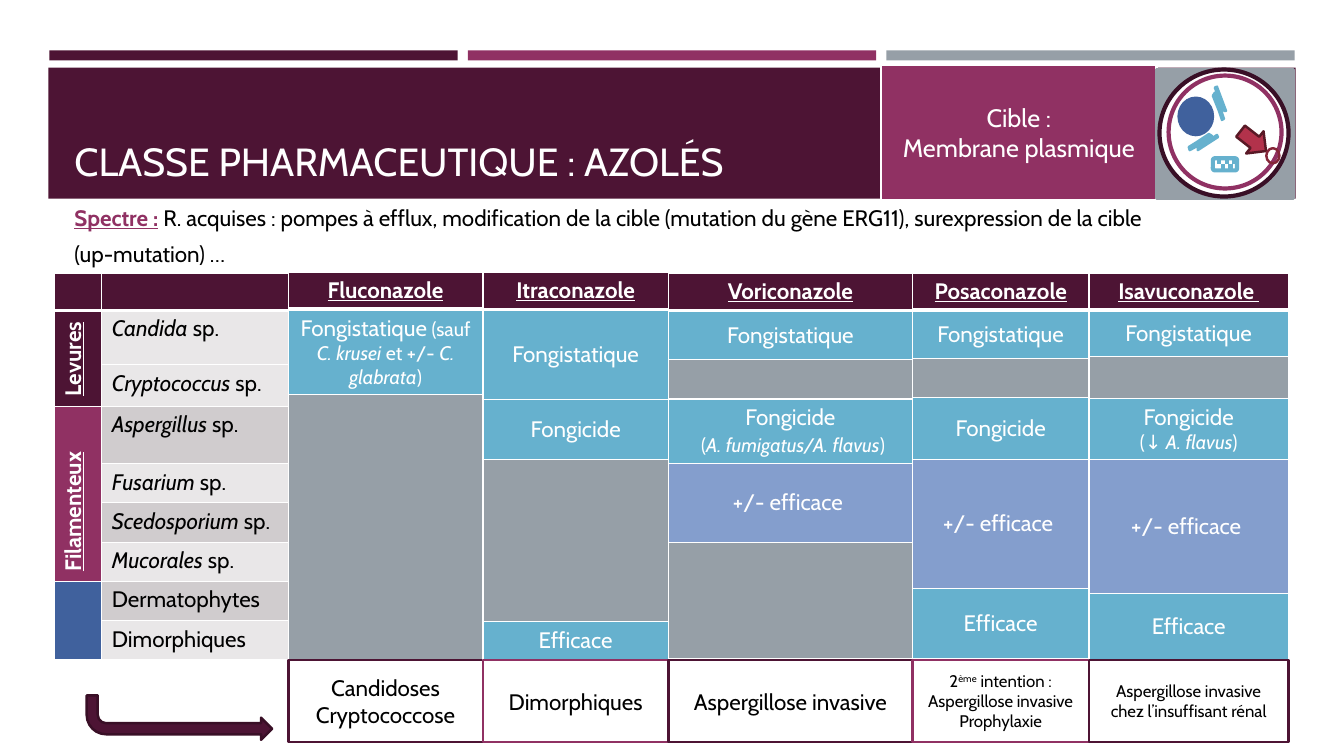
from lxml import etree
from pptx import Presentation
from pptx.dml.color import RGBColor
from pptx.enum.shapes import MSO_CONNECTOR, MSO_SHAPE
from pptx.enum.text import MSO_ANCHOR, PP_ALIGN
from pptx.oxml.ns import qn
from pptx.util import Emu, Inches, Pt

RECTANGLE, ROUNDED = MSO_SHAPE.RECTANGLE, MSO_SHAPE.ROUNDED_RECTANGLE
OVAL, RIGHT_ARROW, BENT_ARROW = MSO_SHAPE.OVAL, MSO_SHAPE.RIGHT_ARROW, MSO_SHAPE.BENT_ARROW
STRAIGHT = MSO_CONNECTOR.STRAIGHT
TOP, MIDDLE, BOTTOM = MSO_ANCHOR.TOP, MSO_ANCHOR.MIDDLE, MSO_ANCHOR.BOTTOM
LEFT, CENTER = PP_ALIGN.LEFT, PP_ALIGN.CENTER

COLORS = {
    "plum": "4D1434", "dark plum": "390F26", "magenta": "903163", "gray": "969FA7",
    "white": "FFFFFF", "black": "000000", "cyan": "66B1CE", "lavender": "849ECD",
    "blue": "40619D", "light": "E9E7E8", "medium": "D0CCCE",
    "red": "B2324B", "dark red": "591926", "wine": "852638",
}
CELL = Inches(0.1)  # the slide is a grid of 133.3 columns by 75 rows
ITALIC, SMALL = {"italic": True}, {"size": 14}
SMALL_ITALIC = {"size": 14, "italic": True}
HEADING = {"bold": True, "underline": True}

COLUMN_EDGES = [28.6, 47.9, 66.3, 90.5, 108, 127.8]
STATIC = ("Fongistatique", "cyan")
CIDAL = ("Fongicide", "cyan")
PARTIAL = ("+/- efficace ", "lavender")
EFFECTIVE = ("Efficace", "cyan")
NO_EFFECT = ("", "gray")
# Each drug: name, table top, row heights, (text, fill) of each row below the header
DRUGS = [
    ("Fluconazole", 27, [3.6, 8.5, 26.3], [
        ([[("Fongistatique", {}), (" (sauf ", SMALL), ("C. krusei ", SMALL_ITALIC),
           ("et +/- ", SMALL), ("C. glabrata", SMALL_ITALIC), (")", SMALL)]], "cyan"),
        NO_EFFECT]),
    ("Itraconazole", 27, [3.7, 8.9, 6, 16.1, 3.7], [STATIC, CIDAL, NO_EFFECT, EFFECTIVE]),
    ("Voriconazole", 27.1, [3.7, 4.9, 3.9, 6.4, 7.8, 11.5], [
        STATIC, NO_EFFECT,
        (["Fongicide", [(" ", {}), ("(", SMALL), ("A. fumigatus/A. flavus", SMALL_ITALIC),
                        (")", SMALL)]], "cyan"),
        PARTIAL, NO_EFFECT]),
    ("Posaconazole", 27.1, [3.6, 4.8, 3.9, 6.1, 12.8, 7],
     [STATIC, NO_EFFECT, CIDAL, PARTIAL, EFFECTIVE]),
    ("Isavuconazole ", 27.1, [3.6, 4.6, 4.2, 6, 13.3, 6.6], [
        STATIC, NO_EFFECT,
        (["Fongicide", [("(↓", SMALL), (" A. flavus", SMALL_ITALIC), (")", SMALL)]], "cyan"),
        PARTIAL, EFFECTIVE]),
]
INDICATIONS = [
    (["Candidoses", "Cryptococcose"], 16, "plum"),
    ("Dimorphiques", 16, "magenta"),
    ("Aspergillose invasive", 16, "plum"),
    ([[("2", {}), ("ème", {"baseline": "30000"}), (" intention : Aspergillose invasive", {})],
      "Prophylaxie"], 12, "magenta"),
    (["Aspergillose invasive", "chez l’insuffisant rénal"], 12, "plum"),
]
GENERA = ["Candida", "Cryptococcus", "Aspergillus", "Fusarium", "Scedosporium", "Mucorales"]
ORGANISMS = [[[(genus + " ", ITALIC), ("sp.", {})]] for genus in GENERA]
ORGANISMS += ["Dermatophytes", "Dimorphiques"]
ORGANISM_FILLS = ["light", "light"] + ["medium", "light"] * 3
ORGANISM_HEIGHTS = [3.7, 5.4, 4.1, 5.7] + [3.9] * 5
# Each group: first row, last row, label, fill
GROUPS = [(1, 2, "Levures", "plum"), (3, 6, "Filamenteux", "magenta"), (7, 8, "", "blue")]
ORGANELLES = [
    [(118.7, 14.1), (119.9, 13.3), (120.2, 13.5), (119.5, 13.9), (119.6, 14.1), (120.7, 13.4),
     (120.8, 13.6), (118.8, 14.9), (118.8, 14.7), (119.2, 14.4), (119.1, 14.3), (118, 14.9),
     (117.9, 14.6)],
    [(120.9, 11), (120.3, 9.5), (120.5, 9.2), (120.8, 10.1), (121, 10), (120.5, 8.7),
     (120.7, 8.6), (121.6, 11), (121.4, 11), (121.2, 10.5), (121, 10.6), (121.4, 11.8),
     (121.2, 11.9)],
]


def grid(*values):
    return [Emu(round(value * CELL)) for value in values]


def rgb(name):
    return RGBColor.from_string(COLORS[name])


def write(frame, content, size=16, color="white", align=CENTER, **formats):
    """Content is a string or a list of paragraphs, each a string or a list of (text, formats)."""
    frame.word_wrap = True
    paragraphs = [content] if isinstance(content, str) else content
    for index, runs in enumerate(paragraphs):
        paragraph = frame.add_paragraph() if index else frame.paragraphs[0]
        paragraph.alignment = align
        for text, changes in [(runs, {})] if isinstance(runs, str) else runs:
            run = paragraph.add_run()
            run.text = text
            values = {"name": "Cabin", "size": size, "color": color, "bold": False,
                      **formats, **changes}
            values["size"] = Pt(values["size"])
            run.font.color.rgb = rgb(values.pop("color"))
            if "baseline" in values:
                run.font._element.set("baseline", values.pop("baseline"))
            for name, value in values.items():
                setattr(run.font, name, value)


def paint(shape, fill, line=None, width=1.75):
    shape.shadow.inherit = False
    if fill:
        shape.fill.solid()
        shape.fill.fore_color.rgb = rgb(fill)
    else:
        shape.fill.background()
    if line:
        shape.line.color.rgb = rgb(line)
        shape.line.width = Pt(width)
    else:
        shape.line.fill.background()


def add_block(slide, kind, place, fill, line=None, width=1.75, text=None, size=16, color="white"):
    shape = slide.shapes.add_shape(kind, *grid(*place))
    paint(shape, fill, line, width)
    if text:
        shape.text_frame.vertical_anchor = MIDDLE
        write(shape.text_frame, text, size, color)
    return shape


def add_text(slide, place, content, anchor, **formats):
    frame = slide.shapes.add_textbox(*grid(*place)).text_frame
    frame.vertical_anchor = anchor
    write(frame, content, align=LEFT, **formats)
    return frame


def style_cell(cell, fill, content="", anchor=MIDDLE, header=False, **formats):
    properties = cell._tc.get_or_add_tcPr()
    for side in "LRTB":
        width = Pt(3 if header and side == "B" else 1)
        border = etree.SubElement(properties, qn("a:ln" + side), w=str(width))
        solid = etree.SubElement(border, qn("a:solidFill"))
        etree.SubElement(solid, qn("a:srgbClr"), val=COLORS["white"])
    cell.fill.solid()
    cell.fill.fore_color.rgb = rgb(fill)
    cell.vertical_anchor = anchor
    if content:
        write(cell.text_frame, content, **formats)
    else:
        cell.margin_top = cell.margin_bottom = 0


def add_grid_table(slide, left, top, widths, heights):
    place = grid(left, top, sum(widths), sum(heights))
    table = slide.shapes.add_table(len(heights), len(widths), *place).table
    table.horz_banding = False
    for column, width in zip(table.columns, grid(*widths)):
        column.width = width
    for row, height in zip(table.rows, grid(*heights)):
        row.height = height
    return table


def add_organisms(slide):
    table = add_grid_table(slide, 5.4, 27.1, [4.7, 20.1], ORGANISM_HEIGHTS)
    for column in range(2):
        style_cell(table.cell(0, column), "plum", header=True)
    for row, (name, fill) in enumerate(zip(ORGANISMS, ORGANISM_FILLS), 1):
        style_cell(table.cell(row, 1), fill, name, TOP, color="black", align=LEFT)
    for first, last, label, fill in GROUPS:
        cell = table.cell(first, 0)
        cell.merge(table.cell(last, 0))
        style_cell(cell, fill, label, TOP, align=LEFT, **HEADING)
        cell._tc.get_or_add_tcPr().set("vert", "vert270")


def add_drugs(slide):
    for index, (name, top, heights, effects) in enumerate(DRUGS):
        left, right = COLUMN_EDGES[index:index + 2]
        table = add_grid_table(slide, left, top, [right - left], heights)
        style_cell(table.cell(0, 0), "plum", name, TOP, header=True, **HEADING)
        for row, (content, fill) in enumerate(effects, 1):
            style_cell(table.cell(row, 0), fill, content)
        content, size, line = INDICATIONS[index]
        add_block(slide, RECTANGLE, (left, 65.5, right - left, 8.1), "white", line,
                  text=content, size=size, color="black")


def add_fungal_cell(slide):
    add_block(slide, RECTANGLE, (114.7, 6.9, 13.6, 12.8), "gray", "gray")
    add_block(slide, OVAL, (115, 6.9, 12.8, 12.6), "white", "dark plum", 3)
    add_block(slide, OVAL, (115.9, 7.5, 11.2, 11.2), "white", "magenta", 3)
    add_block(slide, OVAL, (116.9, 9.7, 3.4, 3.7), "blue", "blue")
    add_block(slide, ROUNDED, (120.3, 15.7, 2.4, 1.2), None, "cyan", 3)
    for index in range(5):
        x, y = 120.9 + 0.38 * index, 15.7 + 0.6 * (index % 2)
        ridge = slide.shapes.add_connector(STRAIGHT, *grid(x, y, x, y + 0.6))
        ridge.line.color.rgb = rgb("cyan")
        ridge.line.width = Pt(3)
        etree.SubElement(ridge._element.spPr, qn("a:effectLst"))
    for outline in ORGANELLES:
        points = [grid(*point) for point in outline]
        builder = slide.shapes.build_freeform(*points[0])
        builder.add_line_segments(points[1:], close=True)
        paint(builder.convert_to_shape(), "cyan", "cyan")
    add_block(slide, RIGHT_ARROW, (122.7, 12.6, 3.2, 2.8), "red", "dark red").rotation = 38
    add_block(slide, OVAL, (125.6, 14.7, 1.3, 1.5), None, "wine")


def main():
    presentation = Presentation()
    presentation.slide_width, presentation.slide_height = Inches(13.33), Inches(7.5)
    slide = presentation.slides.add_slide(presentation.slide_layouts[6])
    for index, fill in enumerate(["plum", "magenta", "gray"]):
        add_block(slide, RECTANGLE, (4.9 + 41.5 * index, 5, 40.5, 1), fill)
    add_block(slide, RECTANGLE, (4.8, 6.7, 123.7, 13), "plum")
    add_text(slide, (6.4, 7.7, 80, 11.1), "CLASSE PHARMACEUTIQUE : AZOLÉS", BOTTOM, size=28)
    spectrum = add_text(slide, (6.4, 19.9, 125.5, 6.9), [
        [("Spectre :", {"color": "magenta", **HEADING}), (" ", {}),
         ("R. acquises : pompes à efflux, modification de la cible (mutation du gène ERG11), "
          "surexpression de la cible", {})],
        "(up-mutation) …"], MIDDLE, color="black")
    spectrum.paragraphs[0].space_after = Pt(6)
    arrow = add_block(slide, BENT_ARROW, (8.6, 69, 18.4, 4.4), "plum", "dark plum")
    arrow._element.spPr.xfrm.set("flipV", "1")
    add_organisms(slide)
    add_drugs(slide)
    add_block(slide, RECTANGLE, (87.4, 6.4, 27.3, 13.5), "magenta", "white",
              text=["Cible :", "Membrane plasmique"], size=18)
    add_fungal_cell(slide)
    presentation.save("out.pptx")


if __name__ == "__main__":
    main()
